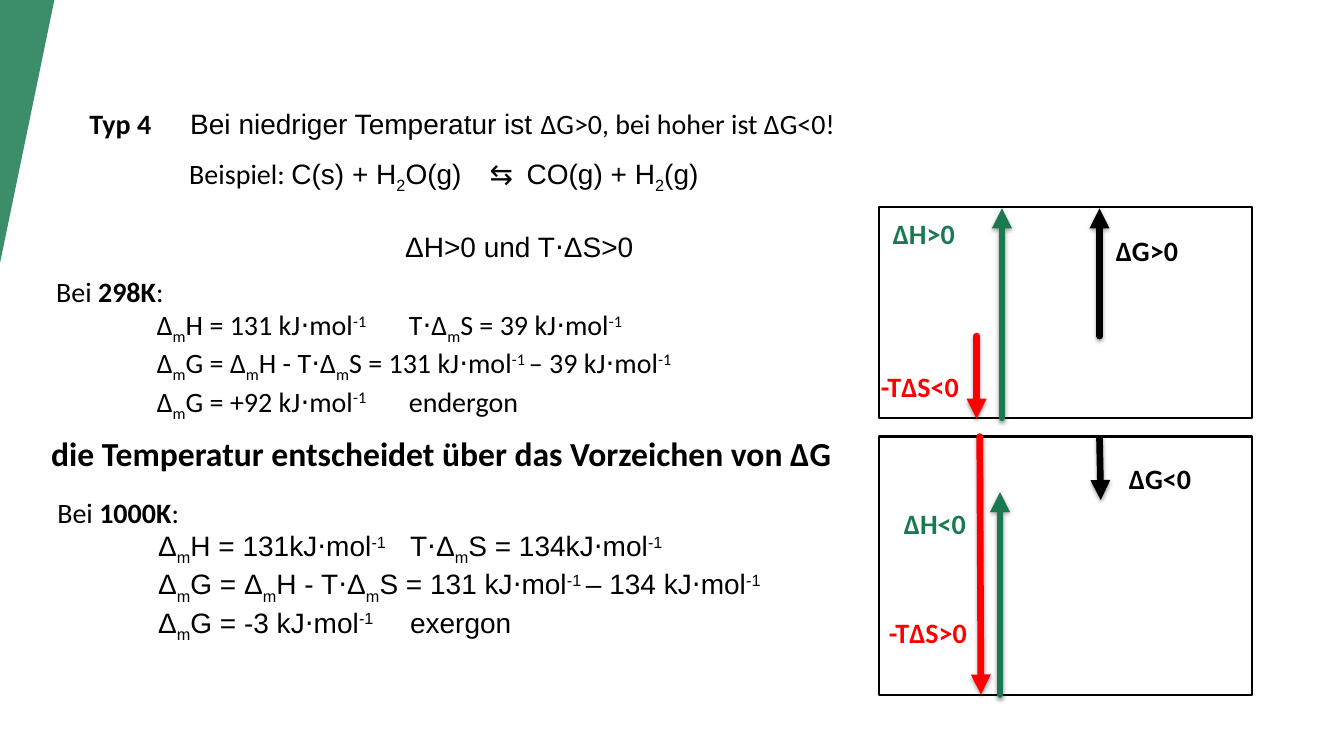
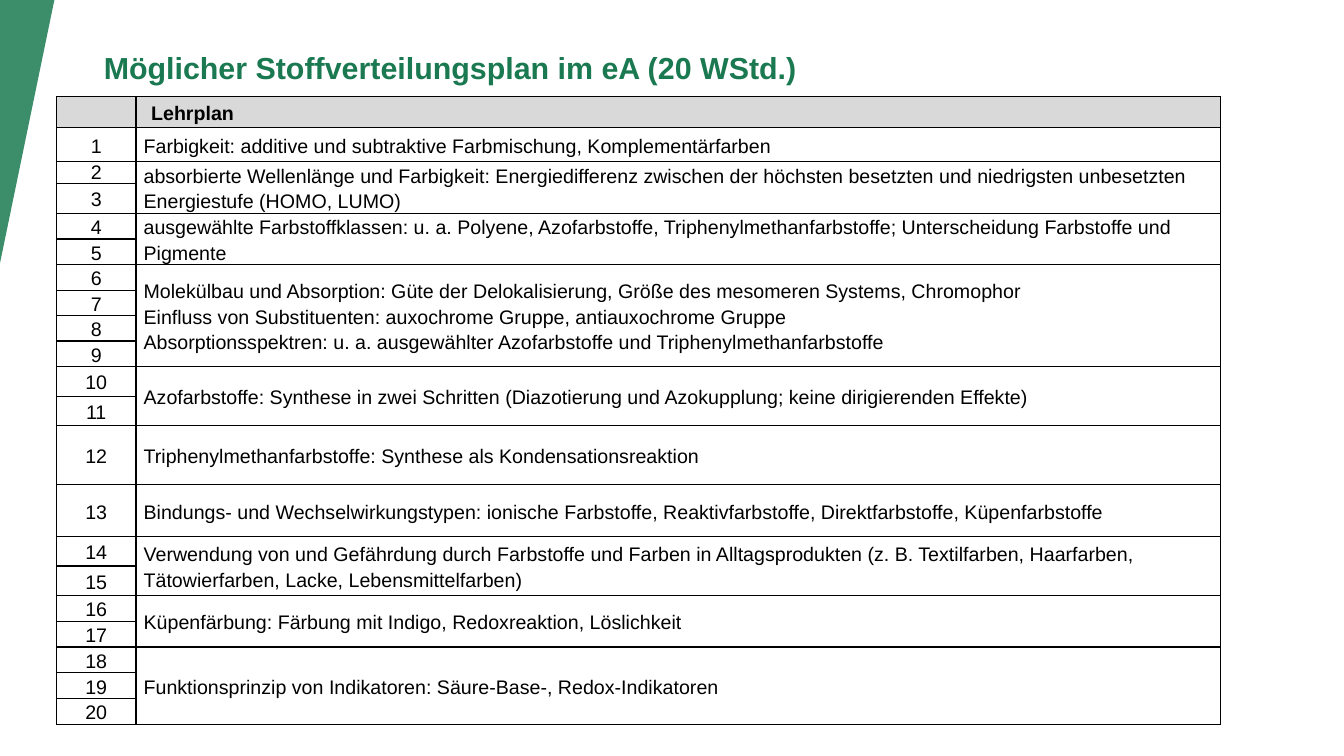
from itertools import count

from pptx import Presentation
from pptx.dml.color import RGBColor
from pptx.enum.shapes import MSO_CONNECTOR as Link, MSO_SHAPE as Form
from pptx.enum.text import MSO_ANCHOR as Anchor, MSO_AUTO_SIZE as Fit, PP_ALIGN as Align
from pptx.oxml import parse_xml
from pptx.oxml.ns import nsdecls
from pptx.util import Cm, Pt

GREEN = RGBColor(0x1A, 0x79, 0x50)
BAND = RGBColor(0x3C, 0x8D, 0x6A)
BLACK = RGBColor(0, 0, 0)
RED = RGBColor(0xFF, 0, 0)
GREY = RGBColor(0xD9, 0xD9, 0xD9)
SANS = "Arial"
BODY = "Calibri"
BASE = {"_": "-25000", "^": "30000"}
NS = nsdecls("a")

COLD = [
    "Bei |*298K|:",
    "Δ|_m|H = 131 kJ⋅mol|^-1| \tT⋅Δ|_m|S = 39 kJ⋅mol|^-1",
    "Δ|_m|G = Δ|_m|H - T⋅Δ|_m|S = 131 kJ⋅mol|^-1 |– 39 kJ⋅mol|^-1",
    "Δ|_m|G = +92 kJ⋅mol|^-1| \tendergon",
]
HOT = [
    "Bei |*1000K|:",
    "Δ|_m|H = 131kJ⋅mol|^-1| \tT⋅Δ|_m|S = 134kJ⋅mol|^-1",
    "Δ|_m|G = Δ|_m|H - T⋅Δ|_m|S = 131 kJ⋅mol|^-1 |– 134 kJ⋅mol|^-1",
    "Δ|_m|G = -3 kJ⋅mol|^-1| \texergon",
]
UPPER = [
    ("ΔH>0", GREEN, (3.1, 5.31, 3.1, 0.03), (0.1, 0.1)),
    ("ΔG>0", BLACK, (5.56, 3.25, 5.56, 0.03), (5.72, 0.53)),
    ("-TΔS<0", RED, (2.46, 3.25, 2.46, 5.33), (-0.2, 3.97)),
]
LOWER = [
    ("ΔH<0", GREEN, (3.05, 6.5, 3.05, 1.4), (0.38, 1.65)),
    ("ΔG<0", BLACK, (5.56, 0.05, 5.59, 1.6), (6.05, 0.5)),
    ("-TΔS>0", RED, (2.54, 0, 2.57, 6.5), (0, 4.38)),
]
PLAN = [
    (["Farbigkeit: additive und subtraktive Farbmischung, Komplementärfarben"], [0.86]),
    (["absorbierte Wellenlänge und Farbigkeit: Energiedifferenz zwischen der höchsten "
      "besetzten und niedrigsten unbesetzten Energiestufe (HOMO, LUMO)"], [0.55, 0.74]),
    (["ausgewählte Farbstoffklassen: u. a. Polyene, Azofarbstoffe, "
      "Triphenylmethanfarbstoffe; Unterscheidung Farbstoffe und Pigmente"], [0.65] * 2),
    (["Molekülbau und Absorption: Güte der Delokalisierung, Größe des mesomeren "
      "Systems, Chromophor",
      "Einfluss von Substituenten: auxochrome Gruppe, antiauxochrome Gruppe",
      "Absorptionsspektren: u. a. ausgewählter Azofarbstoffe und "
      "Triphenylmethanfarbstoffe"], [0.64] * 4),
    (["Azofarbstoffe: Synthese in zwei Schritten (Diazotierung und Azokupplung; "
      "keine dirigierenden Effekte)"], [0.75] * 2),
    (["Triphenylmethanfarbstoffe: Synthese als Kondensationsreaktion"], [1.48]),
    (["Bindungs- und Wechselwirkungstypen: ionische Farbstoffe, Reaktivfarbstoffe, "
      "Direktfarbstoffe, Küpenfarbstoffe"], [1.31]),
    (["Verwendung von und Gefährdung durch Farbstoffe und Farben in Alltagsprodukten "
      "(z. B. Textilfarben, Haarfarben, Tätowierfarben, Lacke, Lebensmittelfarben)"],
     [0.74] * 2),
    (["Küpenfärbung: Färbung mit Indigo, Redoxreaktion, Löslichkeit"], [0.65] * 2),
    (["Funktionsprinzip von Indikatoren: Säure-Base-, Redox-Indikatoren"], [0.65] * 3),
]


def put(par, text, face=BODY, size=20, color=BLACK, bold=False):
    """Add runs split at |, marked * bold, _ sub, ^ super or @ for the other face."""
    other = SANS if face == BODY else BODY
    for part in text.split("|"):
        mark = part[0] if part[0] in "*_^@" else ""
        run = par.add_run()
        run.text = part[len(mark):]
        font = run.font
        font.name = other if mark == "@" else face
        font.size = Pt(size)
        font.bold = bold or mark == "*"
        font.color.rgb = color
        if mark in BASE:
            run._r.get_or_add_rPr().set("baseline", BASE[mark])


def inset(par, left):
    """Drop the bullet and indent the whole paragraph by centimetres."""
    props = par._p.get_or_add_pPr()
    props.set("marL", str(Cm(left)))
    props.set("indent", "0")
    props.append(parse_xml(f"<a:buNone {NS}/>"))


def tabs(par, stops):
    """Set left tab stops in centimetres."""
    marks = "".join(f'<a:tab pos="{Cm(s)}" algn="l"/>' for s in stops)
    par._p.get_or_add_pPr().append(parse_xml(f"<a:tabLst {NS}>{marks}</a:tabLst>"))


def place(shape, box):
    """Move a text shape to its box and return its frame set to wrap."""
    shape.left, shape.top, shape.width, shape.height = map(Cm, box)
    frame = shape.text_frame
    frame.word_wrap = True
    frame.auto_size = Fit.NONE
    frame.vertical_anchor = Anchor.TOP
    return frame


def note(slide, box):
    """Add a text box and return its frame."""
    return place(slide.shapes.add_textbox(0, 0, 0, 0), box)


def band(slide):
    """Draw the green wedge at the top left corner."""
    wedge = slide.shapes.add_shape(Form.ISOSCELES_TRIANGLE, 0, 0, Cm(1.37), Cm(6.63))
    wedge.adjustments[0] = 1
    wedge.rotation = 180
    wedge.shadow.inherit = False
    wedge.fill.solid()
    wedge.fill.fore_color.rgb = BAND
    wedge.line.fill.background()


def start(deck, layout):
    """Add a slide with the shared band."""
    slide = deck.slides.add_slide(deck.slide_layouts[layout])
    band(slide)
    return slide


def arrow(slide, ends, color):
    """Draw a thick arrow with a soft shadow."""
    line = slide.shapes.add_connector(Link.STRAIGHT, *map(Cm, ends))
    line.line.width = Pt(4.75)
    line.line.color.rgb = color
    stroke = line.line._get_or_add_ln()
    stroke.set("cap", "rnd")
    stroke.append(parse_xml(f'<a:tailEnd {NS} type="triangle"/>'))
    line._element.spPr.append(parse_xml(
        f'<a:effectLst {NS}><a:outerShdw blurRad="{Pt(3.1)}" dist="{Pt(1.6)}" '
        'dir="5400000" rotWithShape="0"><a:srgbClr val="000000">'
        '<a:alpha val="38000"/></a:srgbClr></a:outerShdw></a:effectLst>'))


def panel(slide, box, items):
    """Draw a framed energy diagram with arrows and labels."""
    left, top = box[:2]
    frame = slide.shapes.add_shape(Form.RECTANGLE, *map(Cm, box))
    frame.shadow.inherit = False
    frame.fill.background()
    frame.line.color.rgb = BLACK
    frame.line.width = Pt(1.5)
    for text, color, (x1, y1, x2, y2), (x, y) in items:
        arrow(slide, (left + x1, top + y1, left + x2, top + y2), color)
        label = note(slide, (left + x, top + y, 3.2, 1.12))
        put(label.paragraphs[0], text, color=color, bold=True)


def steps(holder, box, lines, face):
    """Fill a body placeholder with the working for one temperature."""
    frame = place(holder, box)
    for i, text in enumerate(lines):
        par = frame.add_paragraph() if i else frame.paragraphs[0]
        inset(par, 2.54 if i else 0)
        tabs(par, (8.89,))
        par.space_before = Pt(0)
        put(par, text, face if i else BODY)


def sample(slide, box):
    """Write the example reaction and its signs."""
    frame = note(slide, box)
    par = frame.paragraphs[0]
    tabs(par, (7.57, 8.5))
    put(par, "@Beispiel: |C(s) + H|_2|O(g)|@\t⇆|\tCO(g) + H|_2|(g)", SANS)
    par = frame.add_paragraph()
    inset(par, 5.44)
    par.space_before = Pt(24.5)
    put(par, "ΔH>0 und T⋅ΔS>0", SANS)


def energy(deck):
    """Build the slide on reactions of type 4."""
    slide = start(deck, 3)
    head, cold, hot = slide.placeholders
    par = place(head, (2, 2.55, 19.74, 1.12)).paragraphs[0]
    tabs(par, (2.54,))
    par.alignment = Align.LEFT
    put(par, "*Typ 4|\t|@Bei niedriger Temperatur ist |ΔG>0, bei hoher ist ΔG<0!")
    sample(slide, (4.52, 3.82, 17, 2.82))
    steps(cold, (1.16, 6.78, 19, 3.68), COLD, BODY)
    steps(hot, (1.19, 12.35, 20.5, 3.68), HOT, SANS)
    panel(slide, (22.15, 5.22, 9.4, 5.31), UPPER)
    panel(slide, (22.15, 11, 9.4, 6.51), LOWER)
    par = note(slide, (1.04, 10.78, 28.4, 1.27)).paragraphs[0]
    par.alignment = Align.JUSTIFY
    put(par, "die Temperatur entscheidet über das Vorzeichen von ΔG", size=24, bold=True)


def edge(cell, fill=None):
    """Give a cell black borders, margins and a fill."""
    props = cell._tc.get_or_add_tcPr()
    for side in "LRTB":
        props.append(parse_xml(
            f'<a:ln{side} {NS} w="{Pt(1)}"><a:solidFill><a:srgbClr val="000000"/>'
            f"</a:solidFill></a:ln{side}>"))
    if fill:
        cell.fill.solid()
        cell.fill.fore_color.rgb = fill
    else:
        cell.fill.background()
    cell.margin_left = cell.margin_right = Cm(0.19)
    cell.margin_top = cell.margin_bottom = 0
    cell.vertical_anchor = Anchor.MIDDLE


def write(cell, lines, align=Align.LEFT, space=1.15, bold=False):
    """Write the lines of a table cell."""
    frame = cell.text_frame
    for i, text in enumerate(lines):
        par = frame.add_paragraph() if i else frame.paragraphs[0]
        par.alignment = align
        par.line_spacing = space
        put(par, text, SANS, 14, bold=bold)


def grid(slide, left, top):
    """Build the table of lessons with merged topics."""
    highs = [0.75] + [high for _, part in PLAN for high in part]
    wides = (2.01, 27.33)
    table = slide.shapes.add_table(
        len(highs), 2, Cm(left), Cm(top), Cm(sum(wides)), Cm(sum(highs))).table
    table.first_row = table.horz_banding = False
    for col, wide in zip(table.columns, wides):
        col.width = Cm(wide)
    for i, high in enumerate(highs):
        table.rows[i].height = Cm(high)
        for cell in table.rows[i].cells:
            edge(cell, None if i else GREY)
    head = table.cell(0, 1)
    head.margin_left = Cm(0.38)
    write(head, ["Lehrplan"], bold=True)
    rows = count(1)
    for lines, part in PLAN:
        hours = [next(rows) for _ in part]
        for hour in hours:
            write(table.cell(hour, 0), [str(hour)], Align.CENTER, 1.0 if hour == 2 else 1.15)
        topic = table.cell(hours[0], 1)
        if len(hours) > 1:
            topic.merge(table.cell(hours[-1], 1))
        write(topic, lines)


def lessons(deck):
    """Build the slide with the teaching plan."""
    slide = start(deck, 5)
    grid(slide, 1.42, 2.44)
    frame = place(slide.shapes.title, (1.1, 1.22, 20.5, 0.94))
    frame.margin_left = frame.margin_right = frame.margin_top = frame.margin_bottom = 0
    frame.vertical_anchor = Anchor.MIDDLE
    par = frame.paragraphs[0]
    par.alignment = Align.CENTER
    put(par, "Möglicher Stoffverteilungsplan im eA (20 WStd.)", SANS, 21.7, GREEN, True)


def main():
    """Build and save the deck."""
    deck = Presentation()
    deck.slide_width, deck.slide_height = Cm(33.87), Cm(19.05)
    energy(deck)
    lessons(deck)
    deck.save("out.pptx")


if __name__ == "__main__":
    main()
